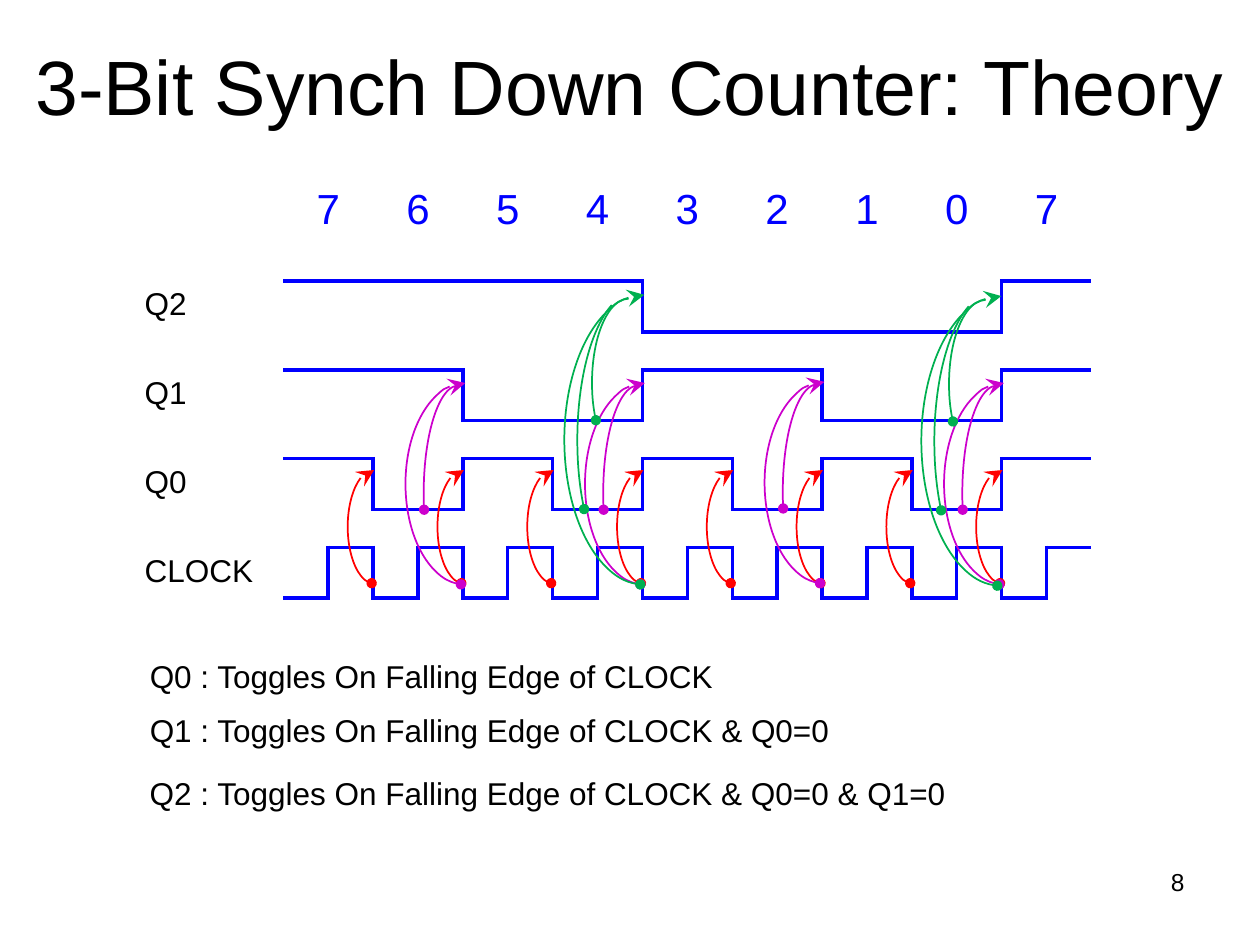
from lxml.etree import SubElement
from pptx import Presentation
from pptx.dml.color import RGBColor
from pptx.enum.shapes import MSO_SHAPE
from pptx.enum.text import MSO_ANCHOR, PP_ALIGN
from pptx.oxml.ns import qn
from pptx.util import Pt

BLUE, RED, PURPLE, GREEN = "0000FF", "FF0000", "CC00CC", "00B050"


def color(code):
    return RGBColor.from_string(code)


def write(frame, text, size, code="000000", align=PP_ALIGN.LEFT):
    para = frame.paragraphs[0]
    para.alignment = align
    run = para.add_run()
    run.text = text
    run.font.name = "Arial"
    run.font.size = Pt(size)
    run.font.color.rgb = color(code)


deck = Presentation()
deck.slide_width, deck.slide_height = Pt(720), Pt(540)
slide = deck.slides.add_slide(deck.slide_layouts[6])
shapes = slide.shapes

# Title, page number and toggle rules
texts = [
    ("3-Bit Synch Down Counter: Theory", 44, PP_ALIGN.CENTER, True, (0, 0.7, 720, 95)),
    ("8", 14, PP_ALIGN.RIGHT, True, (516.2, 491.8, 167.8, 37.4)),
    ("Q0 : Toggles On Falling Edge of CLOCK", 18, PP_ALIGN.LEFT, False,
     (78.5, 371.8, 339, 29)),
    ("Q1 : Toggles On Falling Edge of CLOCK & Q0=0", 18, PP_ALIGN.LEFT, False,
     (78.5, 402.8, 417, 29)),
    ("Q2 : Toggles On Falling Edge of CLOCK & Q0=0 & Q1=0", 18, PP_ALIGN.LEFT, False,
     (78.5, 438.8, 474, 29)),
]
for text, size, align, wrap, area in texts:
    frame = shapes.add_textbox(*map(Pt, area)).text_frame
    frame.word_wrap = wrap
    if size == 44:
        frame.vertical_anchor = MSO_ANCHOR.MIDDLE
    write(frame, text, size, align=align)

# Timing table: the waves are drawn by the cell borders
widths = [86.4] + [25.66] * 18
heights = [36] + [21.6, 29.1] * 4 + [29.1]
graphic = shapes.add_table(len(heights), len(widths), Pt(75.5), Pt(103),
                           Pt(sum(widths)), Pt(sum(heights)))
table = graphic.table
table.first_row = table.horz_banding = False
style = table._tbl.tblPr.find(qn("a:tableStyleId"))
style.text = "{2D5ABB26-0587-4C30-8999-92F81FD0307C}"
for column, width in zip(table.columns, widths):
    column.width = Pt(width)
for row, height in zip(table.rows, heights):
    row.height = Pt(height)

for i, count in enumerate("765432107"):
    col = 1 + 2 * i
    table.cell(0, col).merge(table.cell(0, col + 1))
    write(table.cell(0, col).text_frame, count, 24, BLUE, PP_ALIGN.CENTER)

waves = {
    "Q2": "111111110000000011",
    "Q1": "111100001111000011",
    "Q0": "110011001100110011",
    "CLOCK": "01" * 9,
}
edges = set()
for i, (name, levels) in enumerate(waves.items()):
    row = 2 + 2 * i
    write(table.cell(row, 0).text_frame, name, 18)
    for col, level in enumerate(levels, 1):
        if level == "1":
            edges |= {(row, col, "T"), (row - 1, col, "B")}
        else:
            edges |= {(row, col, "B"), (row + 1, col, "T")}
        if col < len(levels) and levels[col] != level:
            edges |= {(row, col, "R"), (row, col + 1, "L")}

for row in range(len(heights)):
    for col in range(len(widths)):
        cell = table.cell(row, col)
        props = cell._tc.get_or_add_tcPr()
        # Every side is stated, so that no border is taken from a neighbour
        for side in "LRTB":
            line = SubElement(props, qn("a:ln" + side), w=str(Pt(2.25)))
            if (row, col, side) in edges:
                fill = SubElement(line, qn("a:solidFill"))
                SubElement(fill, qn("a:srgbClr"), val=BLUE)
            else:
                SubElement(line, qn("a:noFill"))
        cell.fill.background()
        if not cell.text_frame.text:
            # Small type keeps the empty rows from growing
            para = cell.text_frame.paragraphs[0]._p
            SubElement(para, qn("a:endParaRPr"), sz="800")

# Trigger arcs: colour, origins, then (dx, dy, width, height, start, end) per arc;
# the first arc of each set carries the arrowhead
sets = [
    (RED, [(198.7 + 51.3 * i, 268.6) for i in range(8)],
     [(0, 0, 30.2, 64.8, 162, 52.48)]),
    (PURPLE, [(231.7 + 102.6 * i, y) for i, y in enumerate([218.9, 218.9, 218.2, 218.9])],
     [(0, 0, 68.4, 115.2, 162, 52.48),
      (10.4, 1.4, 39.6, 123.1, 162, 15.38)]),
    (GREEN, [(526.5, 169.2), (322.5, 168.5)],
     [(0, 0, 91.4, 165.6, 162, 53.05),
      (15.8, 2.2, 41.8, 95.8, 162, 29.46),
      (7.4, -1.4, 66.2, 168.5, 167.93, 32.14)]),
]
for code, origins, arcs in sets:
    group = shapes.add_group_shape()
    for x, y in origins:
        for i, (dx, dy, width, height, start, end) in enumerate(arcs):
            arc = group.shapes.add_shape(MSO_SHAPE.ARC, Pt(x + dx), Pt(y + dy),
                                         Pt(width), Pt(height))
            arc.adjustments[0], arc.adjustments[1] = start, end
            arc._element.spPr.xfrm.set("flipH", "1")
            arc.shadow.inherit = False
            arc.fill.background()
            arc.line.color.rgb = color(code)
            arc.line.width = Pt(1)
            line = arc.line._get_or_add_ln()
            if i == 0:
                SubElement(line, qn("a:headEnd"), type="stealth", w="lg", len="lg")
            SubElement(line, qn("a:tailEnd"), type="oval")

deck.save("out.pptx")
